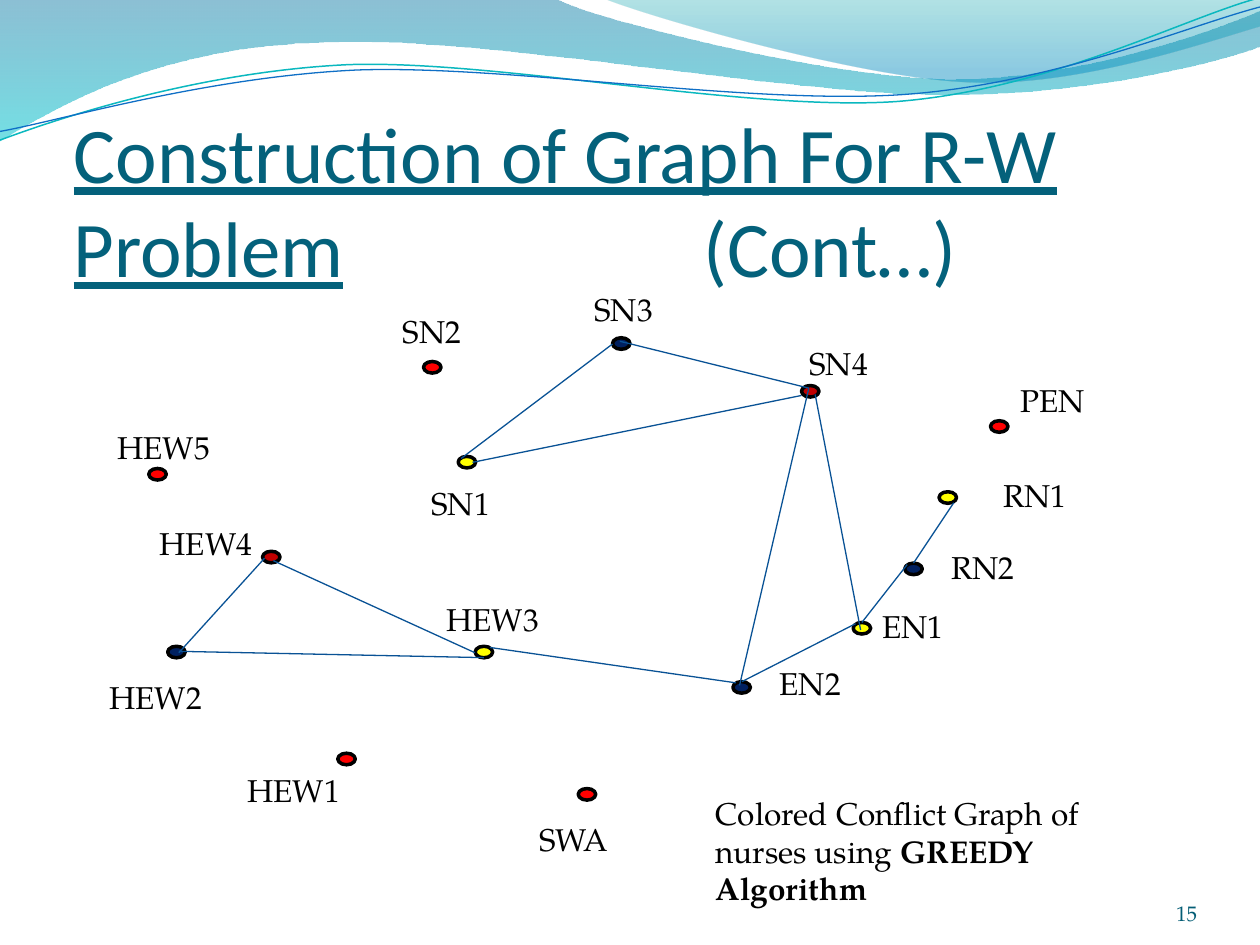
"""Build the slide with the coloured conflict graph of nurses."""
from dataclasses import dataclass

from lxml import etree
from pptx import Presentation
from pptx.dml.color import RGBColor
from pptx.enum import shapes, text
from pptx.oxml.ns import qn
from pptx.util import Pt


@dataclass(frozen=True)
class Theme:
    heading_font: str = "Calibri"
    body_font: str = "TeX Gyre Pagella"
    heading_size: int = 45
    body_size: int = 18
    number_size: int = 12
    heading: str = "04617B"
    number: str = "045D75"
    ink: str = "000000"
    edge: str = "095295"
    red: str = "FF0000"
    crimson: str = "C00000"
    navy: str = "002060"
    yellow: str = "FFFF00"
    wave_big: tuple = ((0, "0074A1", 45), (1, "00C6CF", 55))
    wave_small: tuple = ((0, "00A1A9", 30), (0.8, "008BBF", 45))
    curve_teal: str = "0AB8BF"
    curve_blue: str = "0F6FC6"


theme = Theme()
deck = Presentation()
deck.slide_width, deck.slide_height = Pt(720), Pt(540)
page = deck.slides.add_slide(deck.slide_layouts[5])


def add_outline(start, segments, closed):
    builder = page.shapes.build_freeform(Pt(start[0]), Pt(start[1]))
    corners = [(Pt(x), Pt(y)) for segment in segments for x, y in segment]
    builder.add_line_segments(corners, close=closed)
    outline = builder.convert_to_shape()
    outline.shadow.inherit = False
    steps = iter(list(outline._element.iter(qn("a:lnTo"))))
    for segment in segments:
        parts = [next(steps) for point in segment]
        if len(parts) == 3:
            bend = etree.Element(qn("a:cubicBezTo"))
            parts[0].addprevious(bend)
            for part in parts:
                bend.append(part[0])
                part.getparent().remove(part)
    return outline


def add_label(left, top, width, height, spans):
    box = page.shapes.add_textbox(Pt(left), Pt(top), Pt(width), Pt(height))
    box.text_frame.word_wrap = True
    para = box.text_frame.paragraphs[0]
    para.font.name = theme.body_font
    para.font.size = Pt(theme.body_size)
    para.font.color.rgb = RGBColor.from_string(theme.ink)
    for words, bold in spans:
        span = para.add_run()
        span.text = words
        if bold:
            span.font.bold = True
    return box


waves = [
    ((0, 0), [[(317, -1)], [(343, 12), (478, 45), (546, 45)],
              [(614, 45), (690, 19), (720, 6)], [(721, 26)],
              [(708, 32), (626, 55), (537, 54)], [(448, 54), (275, 20), (185, 24)],
              [(93, 26), (33, 60), (-1, 81)], [(0, 0)]], theme.wave_big),
    ((345, -1), [[(366, 8), (491, 45), (554, 47)], [(616, 50), (692, 23), (720, 15)],
                 [(720, 0)], [(345, -1)]], theme.wave_small),
]
for start, segments, stops in waves:
    wave = add_outline(start, segments, True)
    wave.line.fill.background()
    wave.fill.gradient()
    wave.fill.gradient_angle = 270
    for stop, (position, color, alpha) in zip(wave.fill.gradient_stops, stops):
        stop.position = position
        stop.color.rgb = RGBColor.from_string(color)
    for tint, (position, color, alpha) in zip(wave._element.spPr.iter(qn("a:srgbClr")), stops):
        etree.SubElement(tint, qn("a:alpha"), val=str(alpha * 1000))

curves = [
    ((-1.4, 63.1), [[(34.2, 51.7), (114.3, 29.4), (199.4, 29.4)],
                    [(284.4, 30.5), (425.9, 67.2), (512, 65.2)],
                    [(599.3, 62.3), (676.1, 25.9), (720.6, 15.9)]], theme.curve_teal, 0.85),
    ((-1.1, 58.1), [[(33.1, 53.7), (118.2, 32.6), (204.3, 32.7)],
                    [(290.3, 33.7), (426.1, 63.2), (515.3, 61.4)],
                    [(601.5, 59.4), (678.9, 30), (721.4, 21)]], theme.curve_blue, 0.75),
]
for start, segments, color, weight in curves:
    curve = add_outline(start, segments, False)
    curve.rotation = 357.3
    curve.fill.background()
    curve.line.color.rgb = RGBColor.from_string(color)
    curve.line.width = Pt(weight)

title = page.shapes.title
title.left, title.top, title.width, title.height = Pt(42), Pt(77.8), Pt(648), Pt(90)
frame = title.text_frame
frame.auto_size = text.MSO_AUTO_SIZE.NONE
frame.word_wrap = True
frame.vertical_anchor = text.MSO_ANCHOR.BOTTOM
frame.margin_left = frame.margin_right = frame.margin_bottom = 0
frame.margin_top = Pt(3.6)
para = frame.paragraphs[0]
para.alignment = text.PP_ALIGN.LEFT
para._p.get_or_add_pPr().set("defTabSz", str(Pt(72)))
para.font.name = theme.heading_font
para.font.size = Pt(theme.heading_size)
para.font.color.rgb = RGBColor.from_string(theme.heading)
for words, underlined in (("Construction of Graph For R-W Problem", True),
                          ("\t\t\t(Cont…)", False)):
    span = para.add_run()
    span.text = words
    span.font.underline = underlined

number = add_label(624, 500.4, 60, 28.8, [("15", False)])
frame = number.text_frame
frame.margin_left = frame.margin_top = frame.margin_right = frame.margin_bottom = 0
frame.vertical_anchor = text.MSO_ANCHOR.BOTTOM
para = frame.paragraphs[0]
para.alignment = text.PP_ALIGN.RIGHT
para.font.size = Pt(theme.number_size)
para.font.color.rgb = RGBColor.from_string(theme.number)

nurses = [
    ("SN1", theme.yellow, (261.8, 260.8), (239.4, 272.9, 78, 33)),
    ("SN2", theme.red, (242, 206.6), (223.2, 175, 53, 29)),
    ("SN3", theme.navy, (350, 193), (332.6, 162, 51, 29)),
    ("SN4", theme.crimson, (458, 220.3), (455.4, 193, 55, 29)),
    ("RN1", theme.yellow, (536.6, 281), (566.3, 268.6, 78, 33)),
    ("EN1", theme.yellow, (487.5, 355.7), (497.2, 343.4, 98, 33)),
    ("RN2", theme.navy, (517, 321.8), (536.4, 309.4, 98, 33)),
    ("HEW1", theme.red, (193, 430.4), (134.2, 437, 118, 33)),
    ("PEN", theme.red, (566, 240.4), (576, 214.2, 108, 33)),
    ("EN2", theme.navy, (418.8, 389.5), (438.5, 375.8, 98, 33)),
    ("SWA", theme.red, (330.4, 450.6), (301, 465.1, 118, 33)),
    ("HEW3", theme.yellow, (271.5, 369.3), (248, 339.1, 118, 33)),
    ("HEW2", theme.navy, (95.8, 369.3), (55.4, 383.8, 118, 33)),
    ("HEW4", theme.crimson, (150, 315), (84.2, 295.9, 84, 29)),
    ("HEW5", theme.red, (85, 267.7), (60, 241.2, 72, 29)),
]
for name, color, (left, top), spot in nurses:
    dot = page.shapes.add_shape(shapes.MSO_SHAPE.OVAL, Pt(left), Pt(top), Pt(10), Pt(6.6))
    dot.shadow.inherit = False
    dot.fill.solid()
    dot.fill.fore_color.rgb = RGBColor.from_string(color)
    dot.line.color.rgb = RGBColor.from_string(theme.ink)
    dot.line.width = Pt(2)
    add_label(*spot, [(name, False)])

conflicts = [
    (263.5, 262, 350, 196.6), (354.2, 195, 462.2, 221.8), (270, 264.2, 458, 226),
    (545, 287.3, 522, 321.8), (465.8, 225.4, 491.8, 360), (518.4, 322.6, 492.5, 355.7),
    (488.9, 356.4, 424, 389.5), (462.2, 221.8, 422.6, 391.7), (280, 370, 420.5, 390.2),
    (151.2, 319, 102.2, 373), (156.2, 320.4, 271.4, 373), (102.2, 372.2, 276.5, 375.8),
]
for ends in conflicts:
    edge = page.shapes.add_connector(shapes.MSO_CONNECTOR.STRAIGHT, *map(Pt, ends))
    edge.line.color.rgb = RGBColor.from_string(theme.edge)
    edge.line.width = Pt(0.75)
    etree.SubElement(edge._element.spPr, qn("a:effectLst"))

add_label(401.8, 450, 257.8, 72.7,
          [("Colored Conflict Graph of nurses using ", False), ("GREEDY Algorithm", True)])

deck.save("out.pptx")
